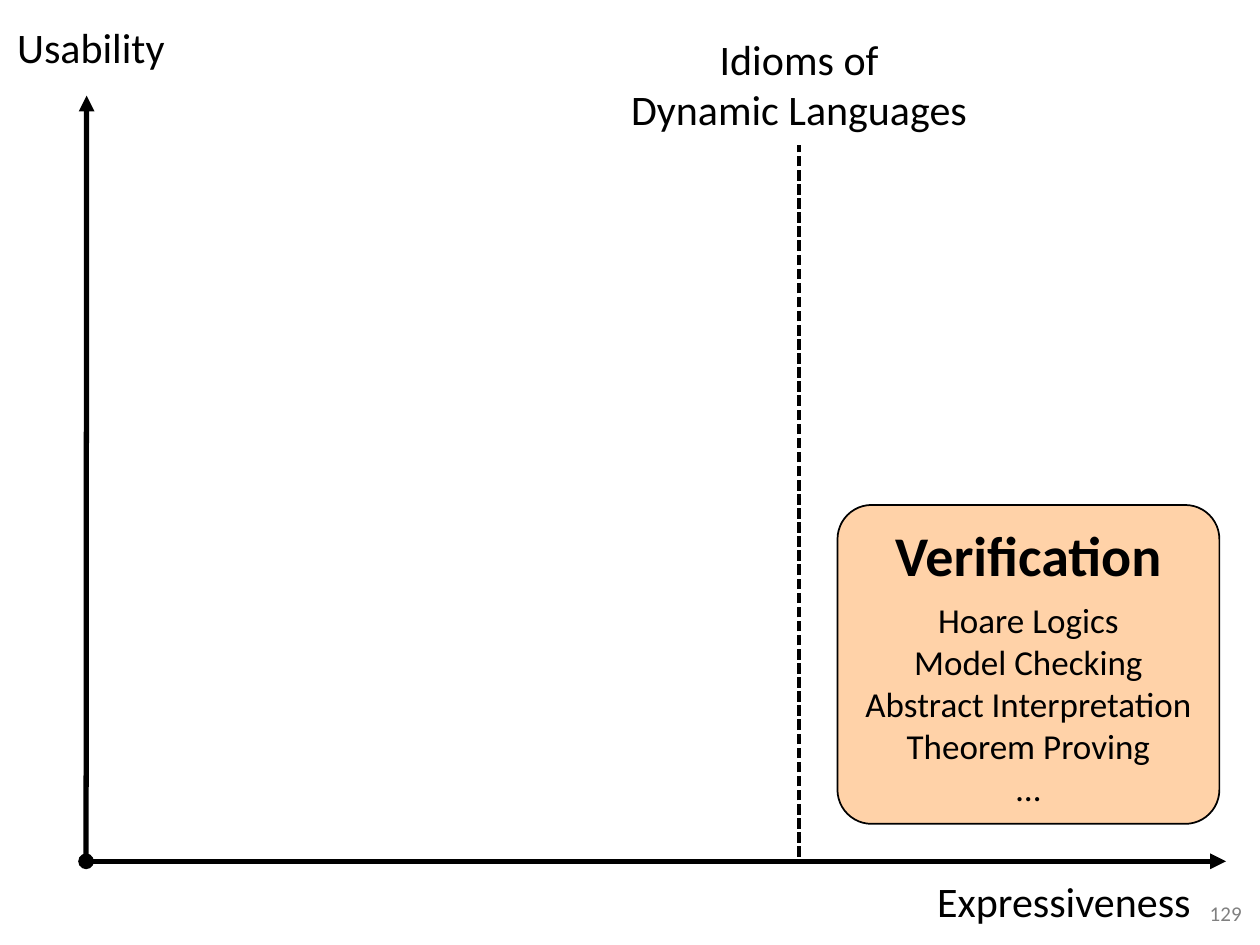
import pptx
import pptx.util
import pptx.dml.color
import pptx.enum.dml
import pptx.enum.shapes
import pptx.enum.text
import pptx.oxml.ns
import lxml.etree

Pt = pptx.util.Pt
Align = pptx.enum.text.PP_ALIGN

FONT = "Calibri"
BLACK = "000000"
LABELS = [
    ("Expressiveness", (530, 498.4, 156, 32.6)),
    ("Usability", (2.2, 10.4, 99.4, 32.6)),
    ("Idioms of\nDynamic Languages", (322, 17.2, 269.3, 61.5)),
]
LINES = [
    {"start": (49.2, 492.2), "end": (700.6, 492.2), "width": 3, "head": "oval", "tail": "triangle"},
    {"start": (456.6, 489.6), "end": (456.6, 83), "width": 2, "dashed": True},
    {"start": (49.2, 492.2), "end": (49.5, 54.7), "width": 3, "tail": "triangle"},
]
CARD_AREA = (478.6, 288.6, 218.2, 182.2)
CARD_TITLE = "Verification"
CARD_ITEMS = "Hoare Logics\nModel Checking\nAbstract Interpretation\nTheorem Proving\n…"
PAGE_NUMBER = "129"
NUMBER_AREA = (548.6, 507.6, 168, 28.8)


def color(value):
    return pptx.dml.color.RGBColor.from_string(value)


def write(para, text, size, ink=BLACK, bold=False, align=Align.CENTER):
    para.alignment = align
    for index, line in enumerate(text.split("\n")):
        if index:
            para.add_line_break()
        span = para.add_run()
        span.text = line
        span.font.name = FONT
        span.font.size = Pt(size)
        span.font.bold = bold
        span.font.color.rgb = color(ink)


def set_frame(box, side=7.2, top=3.6, wrap=True):
    frame = box.text_frame
    frame.word_wrap = wrap
    frame.vertical_anchor = pptx.enum.text.MSO_ANCHOR.MIDDLE
    frame.margin_left = frame.margin_right = Pt(side)
    frame.margin_top = frame.margin_bottom = Pt(top)
    return frame


def add_text(page, text, area, size, side=7.2, top=3.6, wrap=True, **style):
    box = page.shapes.add_textbox(*map(Pt, area))
    write(set_frame(box, side, top, wrap).paragraphs[0], text, size, **style)


def add_line(page, start, end, width, head=None, tail=None, dashed=False):
    connector = page.shapes.add_connector(
        pptx.enum.shapes.MSO_CONNECTOR.STRAIGHT, *map(Pt, start + end))
    connector.line.color.rgb = color(BLACK)
    connector.line.width = Pt(width)
    if dashed:
        connector.line.dash_style = pptx.enum.dml.MSO_LINE.SQUARE_DOT
    qn = pptx.oxml.ns.qn
    properties = connector.element.spPr
    outline = properties.find(qn("a:ln"))
    for tag, kind in (("a:headEnd", head), ("a:tailEnd", tail)):
        if kind:
            lxml.etree.SubElement(outline, qn(tag), type=kind)
    lxml.etree.SubElement(properties, qn("a:effectLst"))


def add_card(page):
    card = page.shapes.add_shape(
        pptx.enum.shapes.MSO_SHAPE.ROUNDED_RECTANGLE, *map(Pt, CARD_AREA))
    card.adjustments[0] = 0.107
    card.shadow.inherit = False
    card.fill.solid()
    card.fill.fore_color.rgb = color("FFD2A8")
    card.line.color.rgb = color(BLACK)
    card.line.width = Pt(1)
    frame = set_frame(card)
    heading = frame.paragraphs[0]
    heading.space_after = Pt(6)
    write(heading, CARD_TITLE, 32, bold=True)
    write(frame.add_paragraph(), CARD_ITEMS, 20)


def main():
    deck = pptx.Presentation()
    deck.slide_width, deck.slide_height = Pt(720), Pt(540)
    page = deck.slides.add_slide(deck.slide_layouts[6])
    add_text(page, PAGE_NUMBER, NUMBER_AREA, 12, ink="808080", align=Align.RIGHT)
    for line in LINES:
        add_line(page, **line)
    for text, area in LABELS:
        add_text(page, text, area, 24, side=3.6, top=1.44, wrap=False)
    add_card(page)
    deck.save("out.pptx")


if __name__ == "__main__":
    main()
